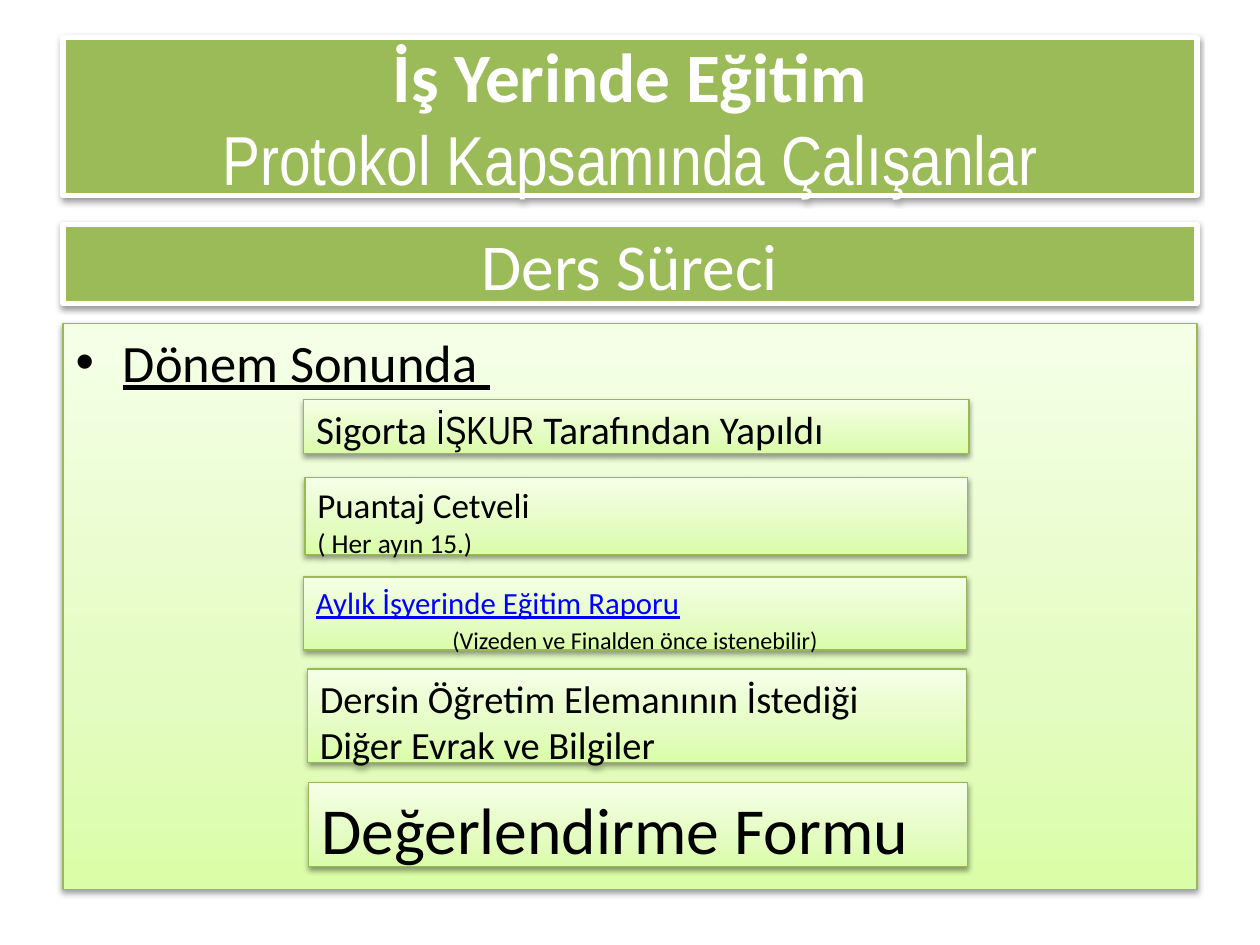
import lxml.etree
import pptx
import pptx.dml.color
import pptx.enum.shapes
import pptx.enum.text
import pptx.oxml
import pptx.oxml.ns
import pptx.util

Inches = pptx.util.Inches
Pt = pptx.util.Pt
Align = pptx.enum.text.PP_ALIGN
Anchor = pptx.enum.text.MSO_ANCHOR

GREEN = "9BBB59"
EDGE = "98B955"
WHITE = "FFFFFF"
BLACK = "000000"
BLUE = "0000FF"
GRADIENT = [(0, "DAFDA7"), (35, "E4FCC2"), (100, "F5FFE7")]


def rgb(value):
    """Turn a hex string into a colour."""
    return pptx.dml.color.RGBColor.from_string(value)


def add_shadow(shape):
    """Give a shape a soft shadow below it."""
    shape.shadow.inherit = False
    effects = shape._element.spPr.find(pptx.oxml.ns.qn("a:effectLst"))
    effects.append(pptx.oxml.parse_xml(
        f'<a:outerShdw {pptx.oxml.ns.nsdecls("a")} blurRad="{Pt(3.1)}" dist="{Pt(1.6)}" '
        'dir="5400000" rotWithShape="0"><a:srgbClr val="000000">'
        '<a:alpha val="38000"/></a:srgbClr></a:outerShdw>'))


def fill_gradient(shape):
    """Fill a shape with the pale green gradient, rising from the bottom."""
    shape.fill.gradient()
    shape.fill.gradient_angle = 90
    gradient = shape._element.spPr.find(pptx.oxml.ns.qn("a:gradFill"))
    stops = gradient.find(pptx.oxml.ns.qn("a:gsLst"))
    for stop in list(stops):
        stops.remove(stop)
    for position, color in GRADIENT:
        stop = lxml.etree.SubElement(stops, pptx.oxml.ns.qn("a:gs"), pos=str(position * 1000))
        lxml.etree.SubElement(stop, pptx.oxml.ns.qn("a:srgbClr"), val=color)


def style_panel(shape, box, banner=False):
    """Place a shape and style it as a solid banner or a pale panel."""
    shape.left, shape.top, shape.width, shape.height = map(Inches, box)
    if banner:
        shape.fill.solid()
        shape.fill.fore_color.rgb = rgb(GREEN)
    else:
        fill_gradient(shape)
    shape.line.color.rgb = rgb(WHITE if banner else EDGE)
    shape.line.width = Pt(3 if banner else 0.75)
    add_shadow(shape)
    frame = shape.text_frame
    frame.word_wrap = True
    frame.auto_size = pptx.enum.text.MSO_AUTO_SIZE.NONE
    frame.vertical_anchor = Anchor.MIDDLE if banner else Anchor.TOP
    return frame


def add_panel(slide, box, banner=False):
    """Add a styled rectangle and return its text frame."""
    shape = slide.shapes.add_shape(
        pptx.enum.shapes.MSO_SHAPE.RECTANGLE, *map(Inches, box))
    return style_panel(shape, box, banner)


def add_text(paragraph, text, size, color=BLACK, font="Calibri", bold=False, underline=False):
    """Add formatted text to a paragraph, with a line break at each newline."""
    for index, line in enumerate(text.split("\n")):
        if index:
            paragraph.add_line_break()
        if line:
            run = paragraph.add_run()
            run.text = line
            run.font.size = Pt(size)
            run.font.color.rgb = rgb(color)
            run.font.name = font
            run.font.bold = bold
            run.font.underline = underline


def format_paragraph(paragraph, size, align=Align.LEFT):
    """Align a paragraph and space it by a fifth of its text size."""
    paragraph.alignment = align
    paragraph.space_before = Pt(round(size * 0.2, 1))
    return paragraph


def add_headings(slide):
    """Fill the title and the subtitle banner."""
    title = style_panel(slide.shapes.title, (0.5, 0.3, 9, 1.25), banner=True).paragraphs[0]
    title.alignment = Align.CENTER
    add_text(title, "İş Yerinde Eğitim\n", 39.6, color=WHITE, bold=True)
    add_text(title, "Protokol Kapsamında Çalışanlar", 39.6, color=WHITE, font="Arial Narrow")
    subtitle = add_panel(slide, (0.5, 1.78, 9, 0.63), banner=True).paragraphs[0]
    subtitle.alignment = Align.CENTER
    add_text(subtitle, "Ders Süreci", 37.4, color=WHITE)


def add_steps(slide):
    """Add the end-of-term list and its five document panels."""
    body = style_panel(slide.placeholders[1], (0.5, 2.57, 9, 4.49)).paragraphs[0]
    body.alignment = Align.JUSTIFY
    add_text(body, "Dönem Sonunda ", 30, underline=True)

    insurance = add_panel(slide, (2.41, 3.17, 5.28, 0.43))
    paragraph = format_paragraph(insurance.paragraphs[0], 22.4)
    add_text(paragraph, "Sigorta ", 22.4)
    add_text(paragraph, "İŞKUR ", 22.4, font="Arial Narrow")
    add_text(paragraph, "Tarafından Yapıldı", 22.4)

    timesheet = add_panel(slide, (2.42, 3.79, 5.26, 0.61))
    paragraph = format_paragraph(timesheet.paragraphs[0], 20)
    add_text(paragraph, "Puantaj Cetveli\n", 20)
    add_text(paragraph, "( Her ayın 15.)", 15.6)

    report = add_panel(slide, (2.41, 4.58, 5.26, 0.58))
    paragraph = format_paragraph(report.paragraphs[0], 17.6)
    add_text(paragraph, "Aylık İşyerinde Eğitim Raporu", 17.6, color=BLUE, underline=True)
    paragraph = format_paragraph(report.add_paragraph(), 13.8, Align.CENTER)
    add_text(paragraph, "(Vizeden ve Finalden önce istenebilir)", 13.8)

    documents = add_panel(slide, (2.44, 5.31, 5.23, 0.74))
    paragraph = format_paragraph(documents.paragraphs[0], 22)
    add_text(paragraph, "Dersin Öğretim Elemanının İstediği\nDiğer Evrak ve Bilgiler", 22)

    evaluation = add_panel(slide, (2.45, 6.21, 5.23, 0.67))
    paragraph = format_paragraph(evaluation.paragraphs[0], 37.5)
    add_text(paragraph, "Değerlendirme Formu", 37.5)


def main():
    """Build and save the presentation."""
    presentation = pptx.Presentation()
    presentation.slide_width = Inches(10)
    presentation.slide_height = Inches(7.5)
    slide = presentation.slides.add_slide(presentation.slide_layouts[1])
    add_headings(slide)
    add_steps(slide)
    presentation.save("out.pptx")


if __name__ == "__main__":
    main()
